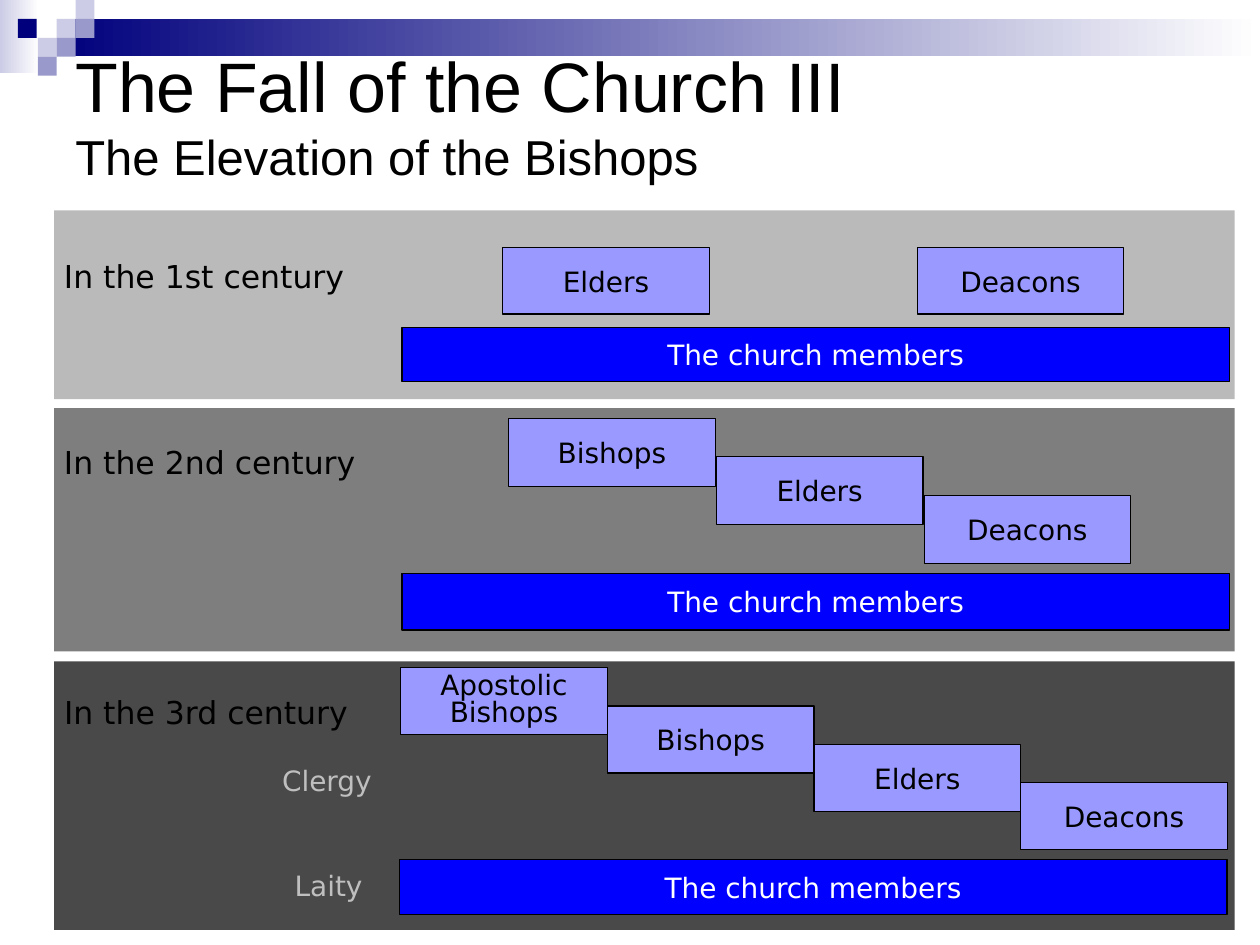
from pptx import Presentation
from pptx.dml.color import RGBColor
from pptx.enum.shapes import MSO_SHAPE
from pptx.enum.text import MSO_ANCHOR, PP_ALIGN
from pptx.util import Pt

RECTANGLE = MSO_SHAPE.RECTANGLE
TOP, MIDDLE = MSO_ANCHOR.TOP, MSO_ANCHOR.MIDDLE
LEFT, CENTER = PP_ALIGN.LEFT, PP_ALIGN.CENTER

BLACK = RGBColor(0x00, 0x00, 0x00)
WHITE = RGBColor(0xFF, 0xFF, 0xFF)
NAVY = RGBColor(0x00, 0x00, 0x7D)
PALE = RGBColor(0xCC, 0xCC, 0xE6)
LAVENDER = RGBColor(0x99, 0x99, 0xCC)
OFFICE_FILL = RGBColor(0x99, 0x99, 0xFF)
MEMBERS_FILL = RGBColor(0x00, 0x00, 0xFF)
LIGHT_GRAY = RGBColor(0xBF, 0xBF, 0xBF)

TITLE_FONT, BODY_FONT = "Arial", "DejaVu Sans"

# Each office row starts at "start" and moves by "step" from box to box
ERAS = [
    dict(label="In the 3rd century", label_at=(29.5, 392.4, 182, 28),
         panel=(378, 153.4), color=RGBColor(0x49, 0x49, 0x49),
         offices=["Apostolic\u0020Bishops", "Bishops", "Elders", "Deacons"],
         start=(229, 381.6), step=(118.1, 21.9), height=38.2,
         members=(228.2, 491, 473, 31.7)),
    dict(label="In the 2nd century", label_at=(29.5, 249.8, 186, 28),
         panel=(233.3, 139), color=RGBColor(0x7E, 0x7E, 0x7E),
         offices=["Bishops", "Elders", "Deacons"],
         start=(290.7, 239), step=(118.7, 22), height=38.9,
         members=(229.7, 327.6, 473, 32.4)),
    dict(label="In the 1st century", label_at=(29.5, 143.3, 180, 28),
         panel=(120.2, 108), color=RGBColor(0xBA, 0xBA, 0xBA),
         offices=["Elders", "Deacons"],
         start=(287.3, 141.6), step=(236.9, 0), height=37.8,
         members=(229.7, 187.2, 473, 31)),
]


def add_text(frame, text, size=16, color=BLACK, font=BODY_FONT, align=LEFT,
             spacing=None, new_paragraph=False):
    paragraph = frame.add_paragraph() if new_paragraph else frame.paragraphs[0]
    paragraph.alignment = align
    if spacing:
        paragraph.line_spacing = spacing
    run = paragraph.add_run()
    run.text = text
    run.font.size = Pt(size)
    run.font.name = font
    run.font.color.rgb = color


class SlideBuilder:
    def __init__(self, slide):
        self.slide = slide

    def rectangle(self, left, top, width, height, color, outlined=False):
        shape = self.slide.shapes.add_shape(
            RECTANGLE, Pt(left), Pt(top), Pt(width), Pt(height))
        shape.shadow.inherit = False
        shape.fill.solid()
        shape.fill.fore_color.rgb = color
        if outlined:
            shape.line.color.rgb = BLACK
            shape.line.width = Pt(0.75)
        else:
            shape.line.fill.background()
        return shape

    def gradient(self, left, top, width, height, start):
        shape = self.rectangle(left, top, width, height, start)
        shape.fill.gradient()
        shape.fill.gradient_angle = 0
        for stop, color, position in zip(shape.fill.gradient_stops, (start, WHITE), (0, 1)):
            stop.color.rgb = color
            stop.position = position

    def box(self, text, left, top, width, height, fill, **text_format):
        shape = self.rectangle(left, top, width, height, fill, outlined=True)
        frame = shape.text_frame
        frame.word_wrap = True
        frame.vertical_anchor = MIDDLE
        add_text(frame, text, align=CENTER, **text_format)

    def text_box(self, left, top, width, height, anchor=TOP, wrap=True):
        shape = self.slide.shapes.add_textbox(Pt(left), Pt(top), Pt(width), Pt(height))
        frame = shape.text_frame
        frame.word_wrap = wrap
        frame.vertical_anchor = anchor
        return frame

    def era(self, label, label_at, panel, color, offices, start, step, height, members):
        self.rectangle(31, panel[0], 674.6, panel[1], color)
        for index, office in enumerate(offices):
            self.box(office, start[0] + index * step[0], start[1] + index * step[1],
                     118, height, OFFICE_FILL, spacing=0.8 if " " in office else None)
        add_text(self.text_box(*label_at, wrap=False), label, size=18)
        self.box("The church members", *members, MEMBERS_FILL, color=WHITE)


def main():
    presentation = Presentation()
    presentation.slide_width, presentation.slide_height = Pt(720), Pt(540)
    slide = presentation.slides.add_slide(presentation.slide_layouts[6])
    builder = SlideBuilder(slide)

    # Header band and its small squares
    builder.gradient(0, 0, 22.3, 41.8, PALE)
    builder.gradient(32.4, 10.8, 687.6, 21.4, NAVY)
    for left, top, color in [
            (32.4, 10.8, PALE), (43.2, 0, PALE), (43.2, 10.8, LAVENDER),
            (21.6, 21.6, PALE), (10.2, 10.8, NAVY), (32.4, 21.6, LAVENDER),
            (21.6, 32.4, LAVENDER)]:
        builder.rectangle(left, top, 10.8, 10.8, color)

    # Title
    title = builder.text_box(36, 31.7, 648, 67, anchor=MIDDLE)
    add_text(title, "The Fall of the Church III", size=40, font=TITLE_FONT)
    add_text(title, "The Elevation of the Bishops", size=28, font=TITLE_FONT,
             new_paragraph=True)

    # Centuries
    for era in ERAS:
        builder.era(**era)

    # Clergy and laity captions
    for text, left, top in [("Clergy", 154.1, 432.7), ("Laity", 161.3, 492.5)]:
        add_text(builder.text_box(left, top, 130.3, 25.2), text, color=LIGHT_GRAY)

    presentation.save("out.pptx")


if __name__ == "__main__":
    main()
